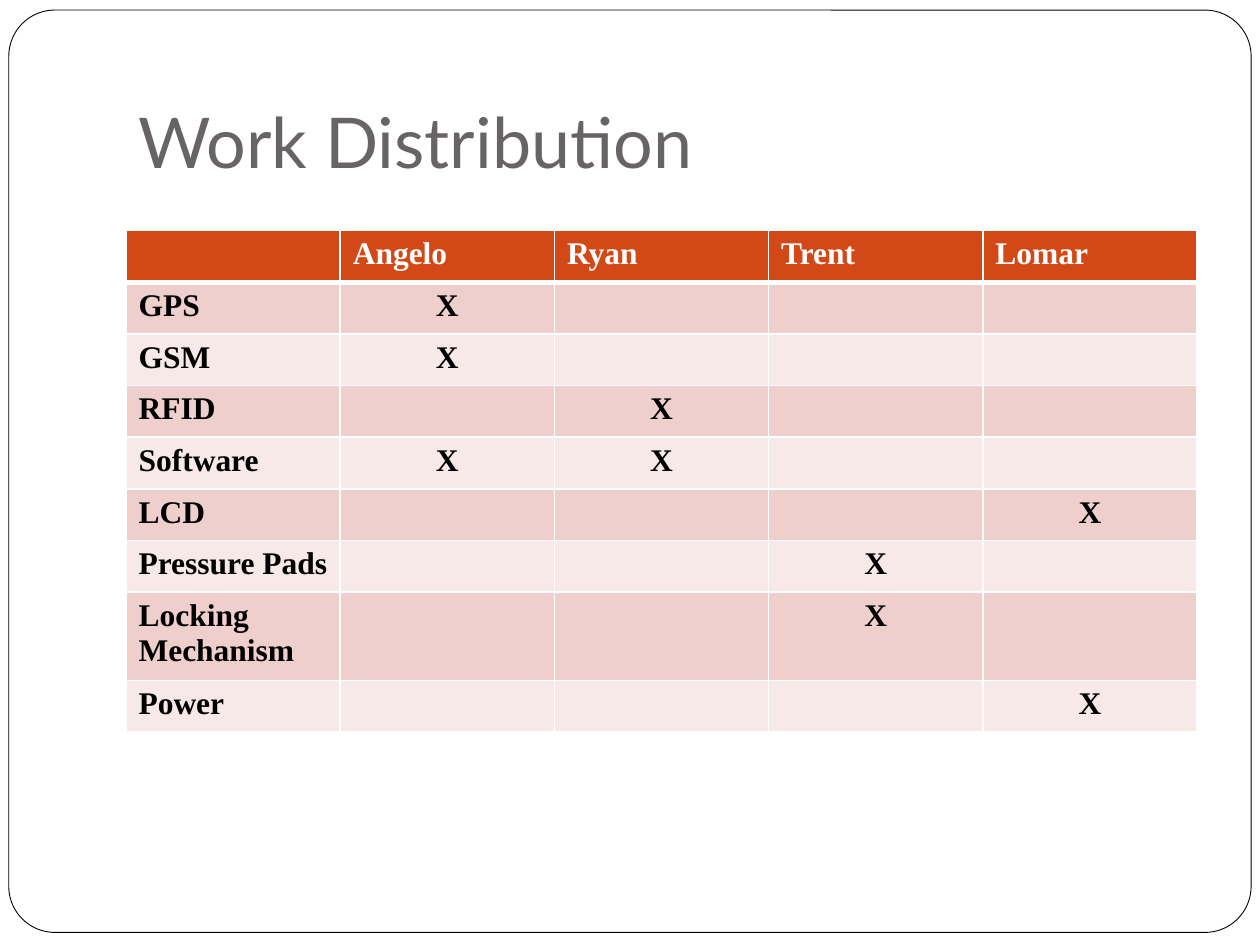
"""Build the work distribution slide."""
from lxml import etree
from pptx import Presentation
from pptx.dml.color import RGBColor
from pptx.enum import shapes, text
from pptx.oxml import ns
from pptx.util import Inches, Pt

TITLE = "Work Distribution"
TEAM = ["Angelo", "Ryan", "Trent", "Lomar"]
TASKS = [
    ("GPS", ["Angelo"]),
    ("GSM", ["Angelo"]),
    ("RFID", ["Ryan"]),
    ("Software", ["Angelo", "Ryan"]),
    ("LCD", ["Lomar"]),
    ("Pressure Pads", ["Trent"]),
    ("Locking Mechanism", ["Trent"]),
    ("Power", ["Lomar"]),
]
THEME = {
    "paper": "FFFFFF", "ink": "000000", "title": "696464", "head": "D34817",
    "bands": ["EFCFCC", "F7E9E8"],
    "title_font": "Lato", "body_font": "Times New Roman",
    "title_size": 40, "body_size": 18,
    "frame": 0.5, "rule": 1, "head_rule": 3,
}
LEFT, WIDTH, TOP, ROW = 1, 8.5, 1.83, 0.41


def rgb(name):
    return RGBColor.from_string(name)


def write(para, words, font, size, color, bold=False):
    run = para.add_run()
    run.text = words
    run.font.name, run.font.size, run.font.bold = font, Pt(size), bold
    run.font.color.rgb = rgb(color)


def edge(cell, side, width):
    props = cell._tc.get_or_add_tcPr()
    line = etree.SubElement(props, ns.qn(f"a:ln{side}"), w=str(Pt(width)))
    fill = etree.SubElement(line, ns.qn("a:solidFill"))
    etree.SubElement(fill, ns.qn("a:srgbClr"), val=THEME["paper"])


def paint(cell, words, fill, color, rules, center=False):
    for side in "LRTB":
        edge(cell, side, rules.get(side, THEME["rule"]))
    cell.fill.solid()
    cell.fill.fore_color.rgb = rgb(fill)
    para = cell.text_frame.paragraphs[0]
    if center:
        para.alignment = text.PP_ALIGN.CENTER
    if words:
        write(para, words, THEME["body_font"], THEME["body_size"], color, True)


def add_frame(slide):
    frame = slide.shapes.add_shape(
        shapes.MSO_SHAPE.ROUNDED_RECTANGLE,
        Inches(0.07), Inches(0.08), Inches(9.86), Inches(7.32))
    frame.adjustments[0] = 0.05
    frame.shadow.inherit = False
    frame.fill.solid()
    frame.fill.fore_color.rgb = rgb(THEME["paper"])
    frame.line.color.rgb = rgb(THEME["ink"])
    frame.line.width = Pt(THEME["frame"])


def add_title(slide):
    box = slide.shapes.add_textbox(
        Inches(LEFT), Inches(0.3), Inches(WIDTH), Inches(1.25)).text_frame
    box.word_wrap = True
    box.vertical_anchor = text.MSO_ANCHOR.BOTTOM
    box.margin_bottom = Inches(0.1)
    write(box.paragraphs[0], TITLE, THEME["title_font"],
          THEME["title_size"], THEME["title"])


def add_grid(slide):
    rows, cols = len(TASKS) + 1, len(TEAM) + 1
    grid = slide.shapes.add_table(
        rows, cols, Inches(LEFT), Inches(TOP),
        Inches(WIDTH), Inches(ROW * rows)).table
    for col, name in enumerate([""] + TEAM):
        paint(grid.cell(0, col), name, THEME["head"], THEME["paper"],
              {"B": THEME["head_rule"]})
    for row, (task, names) in enumerate(TASKS, 1):
        band = THEME["bands"][(row - 1) % 2]
        rules = {"T": THEME["head_rule"]} if row == 1 else {}
        paint(grid.cell(row, 0), task, band, THEME["ink"], rules)
        for col, name in enumerate(TEAM, 1):
            mark = "X" if name in names else ""
            paint(grid.cell(row, col), mark, band, THEME["ink"], rules, True)


def main():
    deck = Presentation()
    deck.slide_width, deck.slide_height = Inches(10), Inches(7.5)
    slide = deck.slides.add_slide(deck.slide_layouts[6])
    add_frame(slide)
    add_title(slide)
    add_grid(slide)
    deck.save("out.pptx")


if __name__ == "__main__":
    main()
